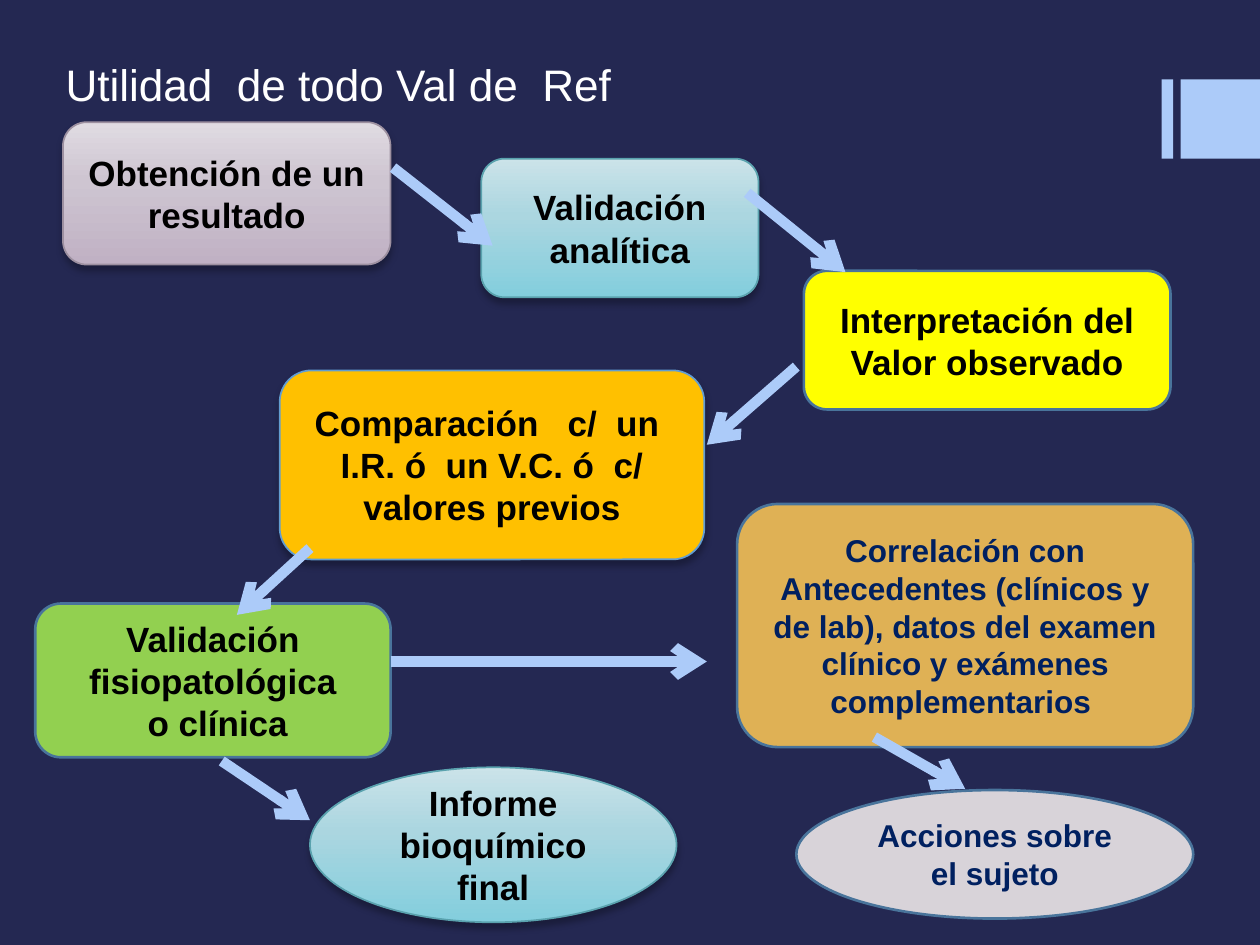
from copy import deepcopy
from dataclasses import dataclass

from lxml import etree
from pptx import Presentation
from pptx.dml.color import RGBColor
from pptx.enum.shapes import MSO_CONNECTOR, MSO_SHAPE
from pptx.enum.text import MSO_ANCHOR, MSO_AUTO_SIZE, PP_ALIGN
from pptx.oxml.ns import qn
from pptx.util import Inches, Pt

RECT, ROUND, OVAL = MSO_SHAPE.RECTANGLE, MSO_SHAPE.ROUNDED_RECTANGLE, MSO_SHAPE.OVAL
STRAIGHT = MSO_CONNECTOR.STRAIGHT
LEFT, CENTER = PP_ALIGN.LEFT, PP_ALIGN.CENTER
MIDDLE, NO_FIT = MSO_ANCHOR.MIDDLE, MSO_AUTO_SIZE.NONE

# Grid of square cells: 100 columns by 75 rows
COLS, ROWS, CELL = 100, 75, 0.1
FONT = "Arial"
NIGHT, SKY, WHITE, BLACK, NAVY = "242852", "ACCBF9", "FFFFFF", "000000", "002060"
STEEL = "49749B"
MAUVE = ("E0DBE2", "CEC5D1", "C0B1C4")
TEAL = ("CBE3E9", "ABD6E0", "83CEDD")
STOPS = (0, 0.41, 1)


@dataclass
class Step:
    """One stage of the flow; place is column, row, width, height."""
    place: tuple[float, float, float, float]
    lines: tuple[str, ...]
    fill: str | tuple[str, ...]
    edge: str = STEEL
    width: float = 1.5
    form: int = ROUND
    size: float = 20
    ink: str = BLACK
    shade: bool = False


@dataclass
class Arrow:
    """A link between two grid points."""
    start: tuple[float, float]
    end: tuple[float, float]


STEPS = [
    Step((5, 9.7, 26, 11.3), ("Obtención de un resultado",), MAUVE, "9D90A0", 1, shade=True),
    Step((38.2, 12.6, 22, 11), ("Validación analítica",), TEAL, "5AA2AE", 1, shade=True),
    Step((63.8, 21.5, 29.1, 11), ("Interpretación del Valor observado",), "FFFF00"),
    Step((22.2, 29.4, 33.7, 15), ("Comparación   c/  un  I.R. ó  un V.C. ó  c/ valores previos",),
         "FFC000", "629DD1", 1, shade=True),
    Step((2.8, 47.9, 28.2, 12.2), ("Validación fisiopatológica", " o clínica"), "92D050"),
    Step((24.6, 60.9, 29.1, 12.3), ("Informe bioquímico final",), TEAL, "5AA2AE", 1, OVAL,
         shade=True),
    Step((58.5, 40, 36.2, 19.3),
         ("Correlación con Antecedentes (clínicos y de lab), datos del examen clínico "
          "y exámenes complementarios ",), "DFB155", size=18, ink=NAVY),
    Step((63.2, 62.7, 31.5, 10.2), ("Acciones sobre el sujeto",), "D8D3D9", form=OVAL,
         size=18, ink=NAVY),
]

ARROWS = [
    Arrow((31.2, 13.3), (39.1, 19.5)),
    Arrow((59.3, 15.3), (67.1, 21.6)),
    Arrow((24.6, 43.5), (18.8, 48.8)),
    Arrow((63.2, 29.1), (56.1, 35.3)),
    Arrow((17.6, 60.4), (24.6, 65.1)),
    Arrow((31, 52.5), (56.1, 52.5)),
    Arrow((69.4, 58.5), (76.6, 62.6)),
]


def grid(*cells: float) -> list[int]:
    return [Inches(n * CELL) for n in cells]


def rgb(code: str) -> RGBColor:
    return RGBColor.from_string(code)


def paint(fill, tint: str | tuple[str, ...], props) -> None:
    """Fill with one colour, or with a blend from top to bottom."""
    if isinstance(tint, str):
        fill.solid()
        fill.fore_color.rgb = rgb(tint)
        return
    fill.gradient()
    fill.gradient_angle = 270
    first = props.find(".//" + qn("a:gs"))
    first.addnext(deepcopy(first))
    for stop, code, spot in zip(fill.gradient_stops, tint, STOPS):
        stop.color.rgb = rgb(code)
        stop.position = spot


def cast(props) -> None:
    """Put a soft shadow below a shape."""
    glow = etree.SubElement(props.find(qn("a:effectLst")), qn("a:outerShdw"),
                            blurRad=str(Pt(4)), dist=str(Pt(3)), dir="5400000", rotWithShape="0")
    tone = etree.SubElement(glow, qn("a:srgbClr"), val=BLACK)
    etree.SubElement(tone, qn("a:alpha"), val="28000")


def write(frame, lines: tuple[str, ...], size: float, ink: str, align: int, bold: bool) -> None:
    frame.word_wrap = True
    frame.auto_size = NO_FIT
    frame.vertical_anchor = MIDDLE
    for i, line in enumerate(lines):
        para = frame.add_paragraph() if i else frame.paragraphs[0]
        para.alignment = align
        run = para.add_run()
        run.text = line
        font = run.font
        font.name, font.size, font.bold = FONT, Pt(size), bold
        font.color.rgb = rgb(ink)


def draw_bar(slide, col: float, wide: float) -> None:
    bar = slide.shapes.add_shape(RECT, *grid(col, 6.3, wide, 6.3))
    bar.shadow.inherit = False
    paint(bar.fill, SKY, bar._element.spPr)
    bar.line.fill.background()


def draw_step(slide, step: Step) -> None:
    shape = slide.shapes.add_shape(step.form, *grid(*step.place))
    props = shape._element.spPr
    shape.shadow.inherit = False
    paint(shape.fill, step.fill, props)
    shape.line.color.rgb = rgb(step.edge)
    shape.line.width = Pt(step.width)
    if step.shade:
        cast(props)
    write(shape.text_frame, step.lines, step.size, step.ink, CENTER, True)


def draw_arrow(slide, arrow: Arrow) -> None:
    link = slide.shapes.add_connector(STRAIGHT, *grid(*arrow.start, *arrow.end))
    link.line.color.rgb = rgb(SKY)
    link.line.width = Pt(6)
    etree.SubElement(link.line._get_or_add_ln(), qn("a:tailEnd"), type="arrow")
    etree.SubElement(link._element.spPr, qn("a:effectLst"))


def main() -> None:
    deck = Presentation()
    deck.slide_width, deck.slide_height = grid(COLS, ROWS)
    slide = deck.slides.add_slide(deck.slide_layouts[5])
    paint(slide.background.fill, NIGHT, None)

    # Title and side bars
    title = slide.shapes.title
    title.left, title.top, title.width, title.height = grid(4.2, 3.9, 80, 5.5)
    write(title.text_frame, ("Utilidad  de todo Val de  Ref",), 25.2, WHITE, LEFT, False)
    draw_bar(slide, 92.2, 0.9)
    draw_bar(slide, 93.7, 6.3)

    # Flow of steps
    for step in STEPS:
        draw_step(slide, step)
    for arrow in ARROWS:
        draw_arrow(slide, arrow)

    deck.save("out.pptx")


if __name__ == "__main__":
    main()
